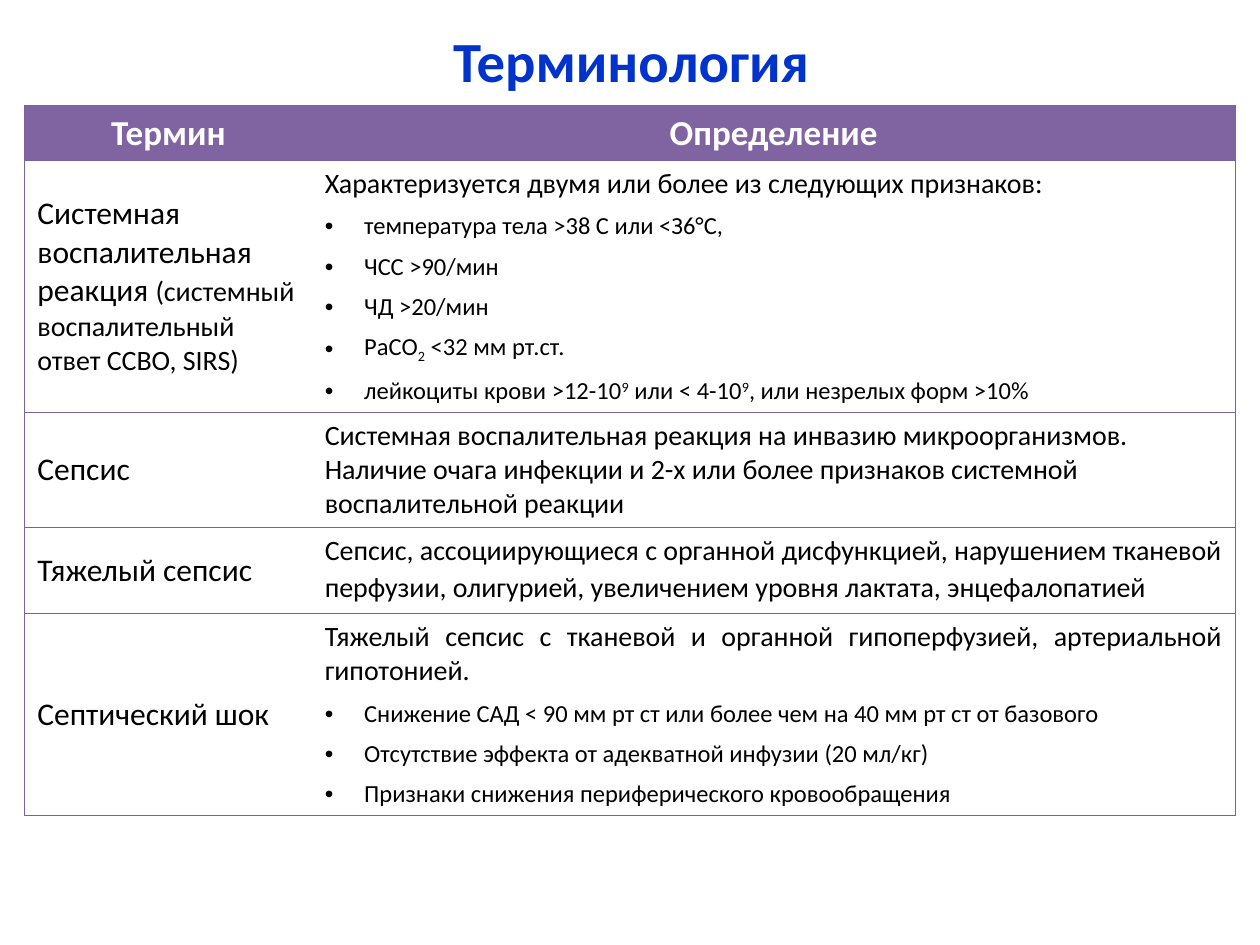
from lxml.etree import SubElement
from pptx import Presentation
from pptx.dml.color import RGBColor
from pptx.enum.text import MSO_ANCHOR, PP_ALIGN
from pptx.oxml.ns import qn
from pptx.util import Pt

FONT, BLUE, PURPLE, EDGE = "Calibri", "0033CC", "8064A2", "7D60A0"
LEFT, CENTER, JUSTIFY = PP_ALIGN.LEFT, PP_ALIGN.CENTER, PP_ALIGN.JUSTIFY
TERM, BODY, ITEM = 18, 16, 14
INDENT = 22.5
SUB, SUP = -25000, 30000

TITLE = "Терминология"
HEADERS = ["Термин", "Определение"]
COLUMNS = [164.2, 527.4]

# A paragraph is (alignment, bulleted, runs); a run is (text, size[, baseline]).
ROWS = [
    ([(LEFT, False, [("Системная воспалительная реакция ", TERM),
                     ("(системный воспалительный ответ ССВО, SIRS)", BODY)])],
     [(JUSTIFY, False, [("Характеризуется двумя или более из следующих признаков: ", BODY)]),
      (JUSTIFY, True, [("температура тела >38 С или <З6°С, ", ITEM)]),
      (JUSTIFY, True, [("ЧСС >90/мин ", ITEM)]),
      (JUSTIFY, True, [("ЧД >20/мин ", ITEM)]),
      (JUSTIFY, True, [("РаСО", ITEM), ("2", ITEM, SUB), (" <32 мм рт.ст. ", ITEM)]),
      (JUSTIFY, True, [("лейкоциты крови >12-10", ITEM), ("9", ITEM, SUP),
                       (" или < 4-10", ITEM), ("9", ITEM, SUP),
                       (", или незрелых форм >10%", ITEM)])]),
    ([(JUSTIFY, False, [("Сепсис ", TERM)])],
     [(LEFT, False, [("Системная воспалительная реакция на инвазию микроорганизмов. "
                      "Наличие очага инфекции и 2-х или более признаков системной "
                      "воспалительной реакции", BODY)])]),
    ([(LEFT, False, [("Тяжелый сепсис", TERM)])],
     [(LEFT, False, [("Сепсис, ассоциирующиеся с органной дисфункцией, нарушением тканевой "
                      "перфузии, олигурией, увеличением уровня лактата, энцефалопатией", BODY),
                     (" ", TERM)])]),
    ([(JUSTIFY, False, [("Септический шок", TERM)])],
     [(JUSTIFY, False, [("Тяжелый сепсис с тканевой и органной гипоперфузией, "
                         "артериальной гипотонией.", BODY)]),
      (LEFT, True, [("Снижение САД < 90 мм рт ст или более чем на 40 мм рт ст от базового", ITEM)]),
      (LEFT, True, [("Отсутствие эффекта от адекватной инфузии (20 мл/кг)", ITEM)]),
      (LEFT, True, [("Признаки снижения периферического кровообращения", ITEM)])]),
]
HEIGHTS = [31.4, 144, 65.7, 49.2, 115.4]


def rgb(value):
    return RGBColor.from_string(value)


def write(tf, paragraphs, color="000000", bold=False, before=6):
    for i, (align, bulleted, runs) in enumerate(paragraphs):
        p = tf.paragraphs[0] if i == 0 else tf.add_paragraph()
        p.alignment, p.space_before = align, Pt(before)
        for text, size, *baseline in runs:
            r = p.add_run()
            r.text = text
            for name, value in {"name": FONT, "size": Pt(size), "bold": bold}.items():
                setattr(r.font, name, value)
            r.font.color.rgb = rgb(color)
            if baseline:
                r.font._element.set("baseline", str(baseline[0]))
        if bulleted:
            pPr = p._p.get_or_add_pPr()
            pPr.set("marL", str(Pt(INDENT)))
            pPr.set("indent", str(-Pt(INDENT)))
            SubElement(pPr, qn("a:buFont"), typeface="Arial")
            SubElement(pPr, qn("a:buChar"), char="•")


def set_borders(cell, visible):
    tcPr = cell._tc.get_or_add_tcPr()
    for side in "LRTB":
        ln = SubElement(tcPr, qn(f"a:ln{side}"), w=str(Pt(0.75)))
        if side in visible:
            fill = SubElement(ln, qn("a:solidFill"))
            SubElement(fill, qn("a:srgbClr"), val=EDGE)
        else:
            SubElement(ln, qn("a:noFill"))


prs = Presentation()
prs.slide_width, prs.slide_height = Pt(720), Pt(540)
s = prs.slides.add_slide(prs.slide_layouts[6])

tf = s.shapes.add_textbox(Pt(36.7), Pt(9.4), Pt(648), Pt(49.7)).text_frame
tf.word_wrap, tf.vertical_anchor = True, MSO_ANCHOR.MIDDLE
write(tf, [(CENTER, False, [(TITLE, 32.4)])], BLUE, True, 0)

table = s.shapes.add_table(len(HEIGHTS), len(COLUMNS), Pt(14.2), Pt(60.3),
                           Pt(sum(COLUMNS)), Pt(sum(HEIGHTS))).table
for column, width in zip(table.columns, COLUMNS):
    column.width = Pt(width)
for row, height in zip(table.rows, HEIGHTS):
    row.height = Pt(height)

header = [[(CENTER, False, [(text, 20)])] for text in HEADERS]
for i, row in enumerate([header, *ROWS]):
    for j, paragraphs in enumerate(row):
        cell = table.cell(i, j)
        set_borders(cell, "LTB" if j == 0 else "RTB")
        if i == 0:
            cell.fill.solid()
            cell.fill.fore_color.rgb = rgb(PURPLE)
            write(cell.text_frame, paragraphs, "FFFFFF", True)
        else:
            cell.fill.background()
            write(cell.text_frame, paragraphs)
            if j == 0:
                cell.vertical_anchor = MSO_ANCHOR.MIDDLE

prs.save("out.pptx")
